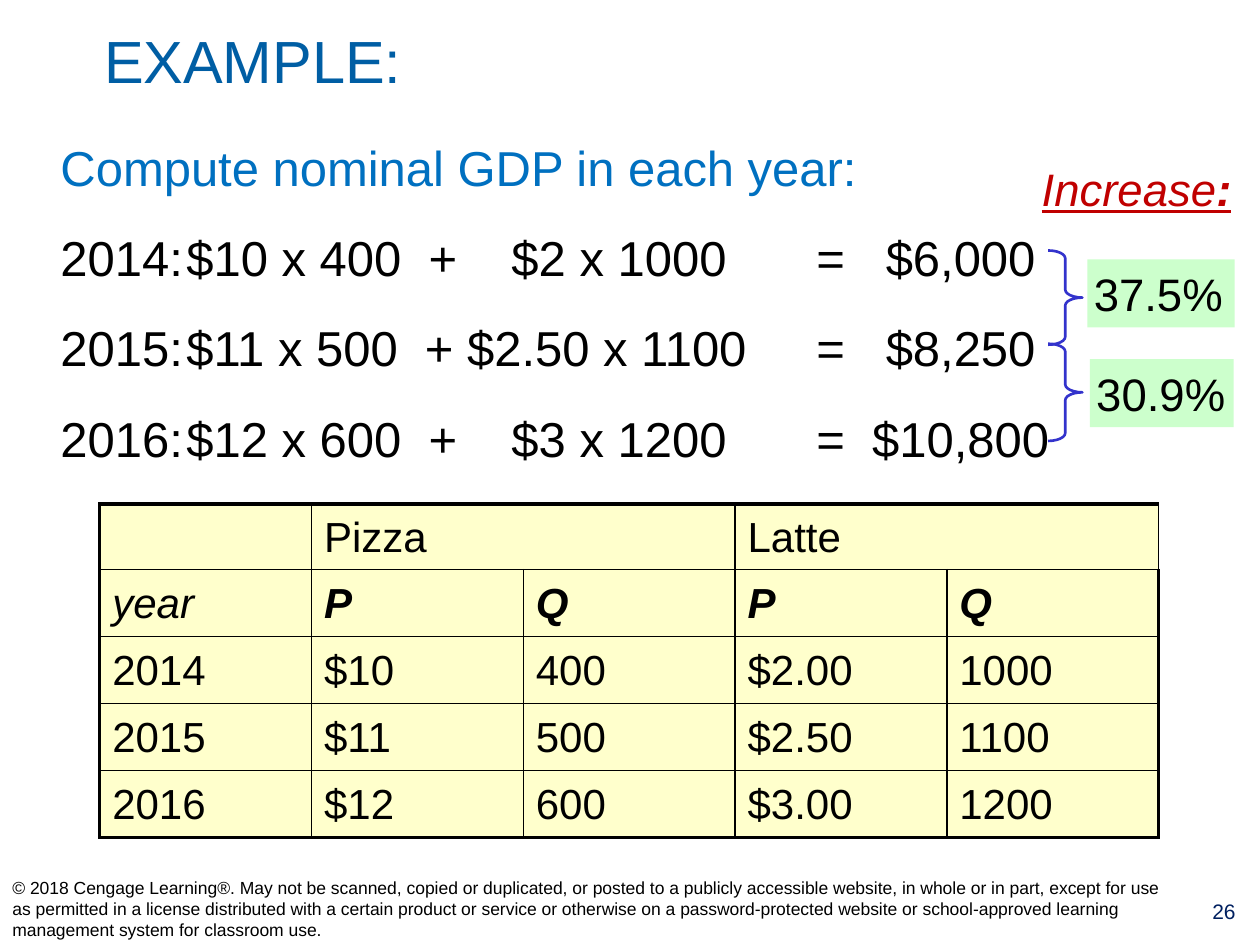
from dataclasses import dataclass

from lxml.etree import SubElement
from pptx import Presentation
from pptx.dml.color import RGBColor
from pptx.enum.shapes import MSO_SHAPE
from pptx.enum.text import MSO_ANCHOR, PP_ALIGN
from pptx.oxml.ns import qn
from pptx.util import Cm, Pt


@dataclass(frozen=True)
class Theme:
    font: str = "Arial"
    title: str = "005EA4"
    heading: str = "0070C0"
    ink: str = "000000"
    accent: str = "C00000"
    number: str = "002060"
    cell: str = "FFFFCC"
    label: str = "CCFFCC"
    brace: str = "3333CC"
    title_size: float = 34
    body_size: float = 28
    label_size: float = 26
    table_size: float = 24
    number_size: float = 12
    notice_size: float = 10
    thin: float = 1
    thick: float = 2.25


THEME = Theme()
TAB_STOPS = (2.54, 15.24)
HEADING = "Compute nominal GDP in each year:"
CALCULATIONS = [
    "2014:\t$10 x 400  +    $2 x 1000  \t=   $6,000",
    "2015:\t$11 x 500  + $2.50 x 1100 \t=   $8,250",
    "2016:\t$12 x 600  +    $3 x 1200 \t=  $10,800",
]
PRICES = [
    ["", "Pizza", "", "Latte", ""],
    ["year", "P", "Q", "P", "Q"],
    ["2014", "$10", "400", "$2.00", "1000"],
    ["2015", "$11", "500", "$2.50", "1100"],
    ["2016", "$12", "600", "$3.00", "1200"],
]
NOTICE = (
    "© 2018 Cengage Learning®. May not be scanned, copied or duplicated, or posted to a "
    "publicly accessible website, in whole or in part, except for use as permitted in a "
    "license distributed with a certain product or service or otherwise on a "
    "password-protected website or school-approved learning management system for "
    "classroom use."
)


def set_attributes(target, values):
    for name, value in values.items():
        setattr(target, name, value)


def add_run(paragraph, text, size, color, **styles):
    run = paragraph.add_run()
    run.text = text
    set_attributes(run.font, {"name": THEME.font, "size": Pt(size), **styles})
    run.font.color.rgb = RGBColor.from_string(color)


def add_text_box(slide, box, **frame_values):
    shape = slide.shapes.add_textbox(*map(Cm, box))
    set_attributes(shape.text_frame, {"word_wrap": True, **frame_values})
    return shape.text_frame


def add_tab_stops(paragraph):
    tab_list = SubElement(paragraph._p.get_or_add_pPr(), qn("a:tabLst"))
    for position in TAB_STOPS:
        SubElement(tab_list, qn("a:tab"), pos=str(Cm(position)), algn="l")


def add_calculations(slide):
    frame = add_text_box(slide, (0.97, 2.64, 23.67, 15.37))
    for index, text in enumerate([HEADING, *CALCULATIONS]):
        paragraph = frame.add_paragraph() if index else frame.paragraphs[0]
        add_tab_stops(paragraph)
        if index:
            paragraph.space_before = Pt(18)
        add_run(paragraph, text, THEME.body_size, THEME.ink if index else THEME.heading)


def set_borders(cell, widths):
    properties = cell._tc.get_or_add_tcPr()
    for side, width in widths.items():
        line = SubElement(properties, qn(f"a:ln{side}"), w=str(Pt(width)))
        fill = SubElement(line, qn("a:solidFill"))
        SubElement(fill, qn("a:srgbClr"), val=THEME.ink)


def fill_cell(cell, text, styles, widths):
    set_borders(cell, widths)
    cell.fill.solid()
    cell.fill.fore_color.rgb = RGBColor.from_string(THEME.cell)
    cell.vertical_anchor = MSO_ANCHOR.MIDDLE
    if text:
        paragraph = cell.text_frame.paragraphs[0]
        paragraph.line_spacing = 1.05
        add_run(paragraph, text, THEME.table_size, THEME.ink, **styles)


def add_price_table(slide):
    last_row, last_column = len(PRICES) - 1, len(PRICES[0]) - 1
    box = map(Cm, (2.01, 10.16, 21.35, 6.67))
    table = slide.shapes.add_table(last_row + 1, last_column + 1, *box).table
    set_attributes(table, {"first_row": False, "horz_banding": False})
    for column in table.columns:
        column.width = Cm(4.27)
    for index, row in enumerate(table.rows):
        row.height = Cm(1.35 if index else 1.27)
    for column in (1, 3):
        table.cell(0, column).merge(table.cell(0, column + 1))
    for row, texts in enumerate(PRICES):
        for column, text in enumerate(texts):
            outer = {"L": column == 0, "R": column == last_column,
                     "T": row == 0, "B": row == last_row}
            widths = {side: THEME.thick if edge else THEME.thin
                      for side, edge in outer.items()}
            styles = {"italic": row == 1, "bold": row == 1 and column > 0}
            fill_cell(table.cell(row, column), text, styles, widths)


def add_increase(slide, text, label_box, brace_box):
    group = slide.shapes.add_group_shape()
    label = group.shapes.add_shape(MSO_SHAPE.RECTANGLE, *map(Cm, label_box))
    label.shadow.inherit = False
    label.fill.solid()
    label.fill.fore_color.rgb = RGBColor.from_string(THEME.label)
    label.line.fill.background()
    margins = {f"margin_{side}": Cm(0.13) for side in ("left", "right", "top", "bottom")}
    set_attributes(label.text_frame, {**margins, "word_wrap": False,
                                      "vertical_anchor": MSO_ANCHOR.MIDDLE})
    paragraph = label.text_frame.paragraphs[0]
    paragraph.alignment = PP_ALIGN.LEFT
    add_run(paragraph, text, THEME.label_size, THEME.ink)

    brace = group.shapes.add_shape(MSO_SHAPE.RIGHT_BRACE, *map(Cm, brace_box))
    brace.shadow.inherit = False
    brace.adjustments[0] = 0.23
    brace.fill.background()
    brace.line.color.rgb = RGBColor.from_string(THEME.brace)
    brace.line.width = Pt(1.5)


def main():
    presentation = Presentation()
    set_attributes(presentation, {"slide_width": Cm(25.4), "slide_height": Cm(19.05)})
    slide = presentation.slides.add_slide(presentation.slide_layouts[6])

    title = add_text_box(slide, (1.85, 0.28, 21.67, 1.83), word_wrap=False,
                         vertical_anchor=MSO_ANCHOR.MIDDLE)
    add_run(title.paragraphs[0], "EXAMPLE:", THEME.title_size, THEME.title)
    add_calculations(slide)

    number = add_text_box(slide, (23.95, 17.98, 1.45, 1.04))
    number.paragraphs[0].alignment = PP_ALIGN.CENTER
    add_run(number.paragraphs[0], "26", THEME.number_size, THEME.number)
    notice = add_text_box(slide, (0, 17.58, 23.9, 1.47), vertical_anchor=MSO_ANCHOR.MIDDLE)
    add_run(notice.paragraphs[0], NOTICE, THEME.notice_size, THEME.ink)

    add_price_table(slide)
    add_increase(slide, "37.5%", (21.92, 5.23, 2.97, 1.37), (21.13, 5.05, 0.69, 1.9))
    increase = add_text_box(slide, (20.75, 3.12, 4.34, 1.35))
    for text, bold in (("Increase", False), (":", True)):
        add_run(increase.paragraphs[0], text, THEME.label_size, THEME.accent,
                italic=True, underline=True, bold=bold)
    add_increase(slide, "30.9%", (21.97, 7.24, 2.9, 1.37), (21.13, 6.93, 0.69, 1.96))
    presentation.save("out.pptx")


if __name__ == "__main__":
    main()
